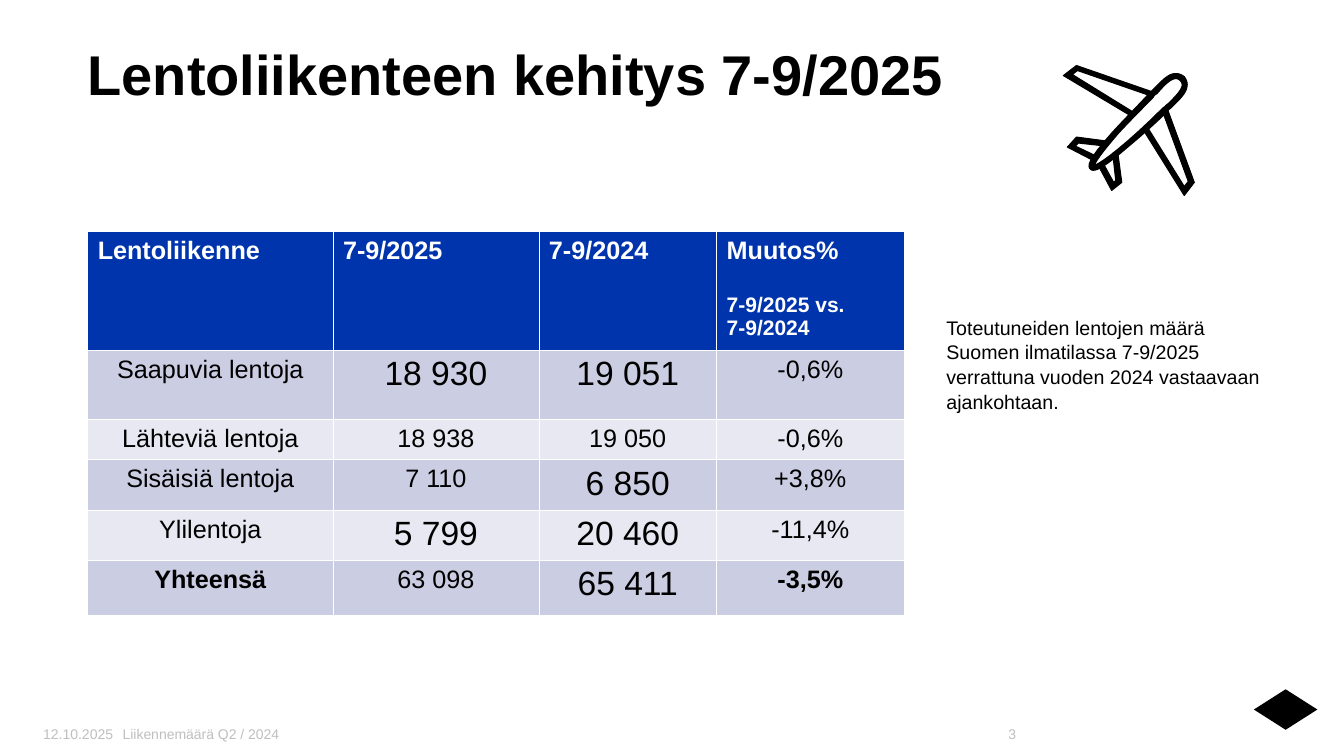
from lxml import etree
from pptx import Presentation
from pptx.dml.color import RGBColor
from pptx.enum.shapes import MSO_SHAPE as Shape
from pptx.enum.text import MSO_ANCHOR as Anchor, PP_ALIGN as Align
from pptx.oxml import parse_xml
from pptx.util import Cm, Pt

BLACK = RGBColor(0x00, 0x00, 0x00)
WHITE = RGBColor(0xFF, 0xFF, 0xFF)
BLUE = RGBColor(0x00, 0x34, 0xAC)
BAND_DARK = RGBColor(0xCB, 0xCD, 0xE3)
BAND_LIGHT = RGBColor(0xE7, 0xE8, 0xF1)
FOOTER_GREY = RGBColor(0xBF, 0xBF, 0xBF)
FONT = "Arial"
DRAWING_NS = "http://schemas.openxmlformats.org/drawingml/2006/main"

deck = Presentation()
deck.slide_width, deck.slide_height = Cm(33.87), Cm(19.05)
page = deck.slides.add_slide(deck.slide_layouts[6])


def style(para, size, color, bold=False, align=Align.LEFT):
    para.alignment = align
    font = para.font
    font.name, font.size, font.bold = FONT, Pt(size), bold
    font.color.rgb = color


def add_text(lines, place, size, color, bold=False, align=Align.LEFT,
             anchor=Anchor.TOP, left=0.25, right=0.25, spacing=1.0):
    box = page.shapes.add_textbox(*(Cm(length) for length in place))
    frame = box.text_frame
    frame.word_wrap = True
    frame.vertical_anchor = anchor
    frame.margin_left, frame.margin_right = Cm(left), Cm(right)
    frame.text = "\n".join(lines)
    for para in frame.paragraphs:
        style(para, size, color, bold, align)
        para.line_spacing = spacing
    return box


# Title
title = add_text(["Lentoliikenteen kehitys 7-9/2025"], (2.21, 0.99, 29.21, 3.1),
                 40, BLACK, bold=True, left=0)
title.text_frame.margin_top = 0

# Traffic table: each body cell holds its text and size
header = ["Lentoliikenne", "7-9/2025", "7-9/2024", "Muutos%"]
flights = [
    [("Saapuvia lentoja", 18), ("18 930", 24), ("19 051", 24), ("-0,6%", 18)],
    [("Lähteviä lentoja", 18), ("18 938", 18), ("19 050", 18), ("-0,6%", 18)],
    [("Sisäisiä lentoja", 18), ("7 110", 18), ("6 850", 24), ("+3,8%", 18)],
    [("Ylilentoja", 18), ("5 799", 24), ("20 460", 24), ("-11,4%", 18)],
    [("Yhteensä", 18), ("63 098", 18), ("65 411", 24), ("-3,5%", 18)],
]
rows = [[(text, 18) for text in header]] + flights
table = page.shapes.add_table(len(rows), len(header), Cm(2.21), Cm(5.84),
                              Cm(20.57), Cm(9.27)).table
for column, width in zip(table.columns, (6.18, 5.19, 4.48, 4.72)):
    column.width = Cm(width)
for row, height in zip(table.rows, (2.97, 1.73, 1.02, 1.09, 0.99, 1.37)):
    row.height = Cm(height)

for r, row in enumerate(rows):
    for c, (text, size) in enumerate(row):
        cell = table.cell(r, c)
        cell.text = text
        is_header = r == 0
        is_total = r == len(rows) - 1 and c in (0, 3)
        style(cell.text_frame.paragraphs[0], size, WHITE if is_header else BLACK,
              is_header or is_total, Align.LEFT if is_header else Align.CENTER)

        # White rules, heavier under the header
        properties = cell._tc.get_or_add_tcPr()
        for side in "LRTB":
            heavy = (r, side) in ((0, "B"), (1, "T"))
            properties.append(parse_xml(
                f'<a:ln{side} xmlns:a="{DRAWING_NS}" w="{Pt(1.5 if heavy else 0.6)}">'
                f'<a:solidFill><a:srgbClr val="{WHITE}"/></a:solidFill></a:ln{side}>'))
        cell.fill.solid()
        cell.fill.fore_color.rgb = (
            BLUE if is_header else BAND_DARK if r % 2 else BAND_LIGHT)

# Compared periods under the last heading
change_frame = table.cell(0, 3).text_frame
change_frame.paragraphs[0].space_after = Pt(20)
periods = change_frame.add_paragraph()
periods.text = "7-9/2025 vs.\v7-9/2024"
style(periods, 15, WHITE, bold=True)

# Footer
for text, place, align, left, right in [
    ("12.10.2025", (1.09, 18.16, 2.29, 0.66), Align.LEFT, 0, 0.25),
    ("Liikennemäärä Q2 / 2024", (2.84, 18.16, 20.27, 0.66), Align.LEFT, 0.25, 0),
    ("3", (23.22, 18.16, 2.64, 0.66), Align.RIGHT, 0, 0.25),
]:
    add_text([text], place, 10, FOOTER_GREY, align=align, anchor=Anchor.MIDDLE,
             left=left, right=right)

# Explanation beside the table
add_text(["Toteutuneiden lentojen määrä", "Suomen ilmatilassa 7-9/2025",
          "verrattuna vuoden 2024 vastaavaan ajankohtaan."],
         (23.6, 7.8, 9.7, 3.84), 14, BLACK, spacing=1.05)

# Aeroplane, in hundredths of an inch; the fuselage is given as Bézier controls
UNIT = 0.0254
STEPS = 8
fuselage_curves = [
    [(1085, 169), (1084, 169), (1083, 169), (1082, 168), (1079, 165), (1078, 160),
     (1104, 131), (1114, 120), (1126, 108), (1140, 93), (1141, 92), (1143, 90),
     (1144, 89), (1152, 81), (1159, 73), (1166, 73), (1170, 73), (1172, 74),
     (1175, 76), (1177, 79), (1178, 81), (1178, 84), (1178, 92), (1171, 98),
     (1162, 107), (1161, 108), (1159, 109), (1158, 111), (1153, 116), (1136, 132),
     (1119, 146), (1097, 165), (1089, 169), (1085, 169)],
    [(1144, 97), (1139, 102), (1124, 117), (1110, 132), (1091, 154), (1087, 161),
     (1086, 164), (1093, 162), (1120, 141), (1154, 107), (1156, 106), (1157, 104),
     (1159, 103), (1166, 96), (1173, 89), (1173, 84), (1173, 83), (1172, 81),
     (1171, 80), (1170, 79), (1168, 78), (1167, 78), (1161, 78), (1154, 86),
     (1148, 93), (1146, 94), (1145, 95), (1144, 97)],
]
fuselage = []
for controls in fuselage_curves:
    contour = [controls[0]]
    for first in range(0, len(controls) - 1, 3):
        a, b, c, d = controls[first:first + 4]
        for step in range(1, STEPS + 1):
            t = step / STEPS
            u = 1 - t
            contour.append(tuple(
                u**3 * a[k] + 3 * u * u * t * b[k] + 3 * u * t * t * c[k] + t**3 * d[k]
                for k in (0, 1)))
    fuselage.append(contour)

left_tail = [(1086, 160), (1059, 146), (1068, 136), (1098, 140), (1097, 145),
             (1070, 142), (1067, 145), (1088, 155)]
right_tail = [(1103, 189), (1089, 163), (1094, 161), (1105, 181), (1107, 179),
              (1104, 152), (1109, 151), (1113, 181)]
right_wing = [(1175, 194), (1135, 130), (1139, 127), (1175, 185), (1179, 180),
              (1154, 112), (1159, 110), (1185, 181)]
left_wing = [(1122, 115), (1055, 75), (1068, 65), (1143, 91), (1141, 95),
             (1069, 70), (1064, 74), (1124, 111)]

plane_parts = []
for contours in (fuselage, [left_tail], [right_tail], [right_wing], [left_wing]):
    builder = None
    for contour in contours:
        points = [(Cm(x * UNIT), Cm(y * UNIT)) for x, y in contour]
        if builder is None:
            builder = page.shapes.build_freeform(*points[0])
        else:
            builder.move_to(*points[0])
        builder.add_line_segments(points[1:], close=True)
    part = builder.convert_to_shape()
    part.line.color.rgb = BLACK
    part.line.width = Pt(0.75)
    plane_parts.append(part)

# Plain emblem in the corner
emblem = page.shapes.add_shape(Shape.DIAMOND, Cm(31.6), Cm(17.37), Cm(1.6), Cm(1.02))
emblem.line.fill.background()

for shape in plane_parts + [emblem]:
    shape.shadow.inherit = False
    shape.fill.solid()
    shape.fill.fore_color.rgb = BLACK

deck.save("out.pptx")
